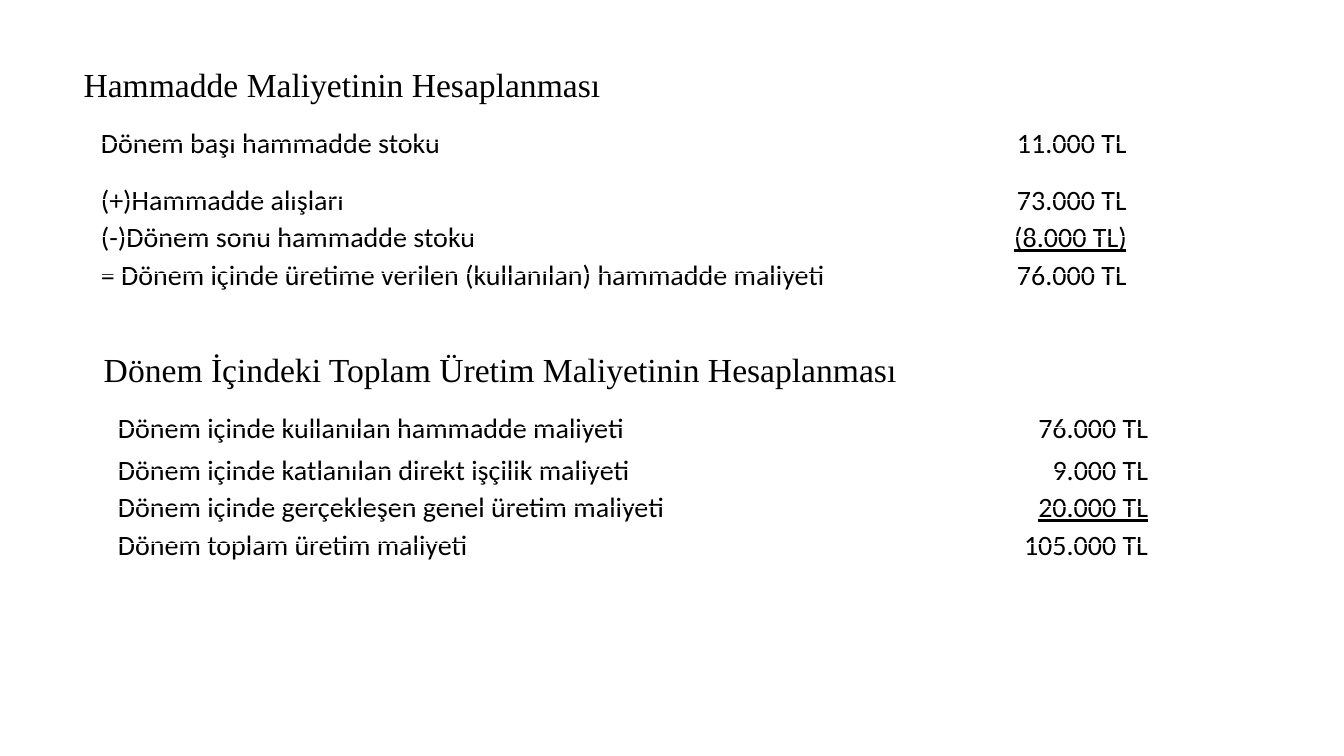
from pptx import Presentation
from pptx.dml.color import RGBColor
from pptx.enum.text import MSO_ANCHOR, MSO_AUTO_SIZE, PP_ALIGN
from pptx.util import Pt

HEADING_FONT = {"name": "Times New Roman", "size": Pt(24), "bold": False}
BODY_FONT = {"name": "Calibri", "size": Pt(20), "bold": False}
HEADING_FRAME = {
    "word_wrap": True,
    "auto_size": MSO_AUTO_SIZE.NONE,
    "vertical_anchor": MSO_ANCHOR.TOP,
}
CELL_MARGINS = {"margin_left": 0, "margin_right": 0, "margin_top": 0, "margin_bottom": 0}
LABEL_INDENT = 5

MATERIAL_COST = [
    ("Dönem başı hammadde stoku", "11.000 TL"),
    ("(+)Hammadde alışları", "73.000 TL"),
    ("(-)Dönem sonu hammadde stoku", "(8.000 TL)"),
    ("= Dönem içinde üretime verilen (kullanılan) hammadde maliyeti", "76.000 TL"),
]
PRODUCTION_COST = [
    ("Dönem içinde kullanılan hammadde maliyeti", "76.000 TL"),
    ("Dönem içinde katlanılan direkt işçilik maliyeti", "9.000 TL"),
    ("Dönem içinde gerçekleşen genel üretim maliyeti", "20.000 TL"),
    ("Dönem toplam üretim maliyeti", "105.000 TL"),
]


def set_attributes(target, values):
    for name, value in values.items():
        setattr(target, name, value)


def set_color(font, color):
    font.color.rgb = RGBColor.from_string(color)


def write_text(paragraph, text, font_values, alignment=PP_ALIGN.LEFT):
    paragraph.alignment = alignment
    run = paragraph.add_run()
    run.text = text
    set_attributes(run.font, font_values)
    set_color(run.font, "000000")
    return run


def format_heading(shape, text, left, top, width, height):
    set_attributes(shape, {
        "left": Pt(left), "top": Pt(top), "width": Pt(width), "height": Pt(height),
    })
    set_attributes(shape.text_frame, HEADING_FRAME)
    write_text(shape.text_frame.paragraphs[0], text, HEADING_FONT)


def write_cell(cell, text, alignment, line_spacing, indent=0, underline=False):
    cell.fill.background()
    set_attributes(cell, {**CELL_MARGINS, "margin_left": Pt(indent)})
    paragraph = cell.text_frame.paragraphs[0]
    paragraph.line_spacing = Pt(line_spacing)
    run = write_text(paragraph, text, BODY_FONT, alignment)
    if underline:
        run.font.underline = True


def add_cost_table(slide, entries, left, top, column_widths, first_height, row_height):
    heights = [first_height] + [row_height] * (len(entries) - 1)
    table = slide.shapes.add_table(
        len(entries), 2, Pt(left), Pt(top), Pt(sum(column_widths)), Pt(sum(heights))
    ).table
    set_attributes(table, {"first_row": False, "horz_banding": False})
    for column, width in zip(table.columns, column_widths):
        column.width = Pt(width)
    last = len(entries) - 1
    for index, (label, amount) in enumerate(entries):
        table.rows[index].height = Pt(heights[index])
        spacing = 13.8 if index == last else 13.5
        write_cell(table.cell(index, 0), label, PP_ALIGN.LEFT, spacing, LABEL_INDENT)
        write_cell(table.cell(index, 1), amount, PP_ALIGN.RIGHT, spacing,
                   underline=index == last - 1)


def main():
    presentation = Presentation()
    set_attributes(presentation, {"slide_width": Pt(960), "slide_height": Pt(540)})
    slide = presentation.slides.add_slide(presentation.slide_layouts[5])

    format_heading(slide.shapes.title, "Hammadde Maliyetinin Hesaplanması",
                   52.5, 42, 856, 36)
    add_cost_table(slide, MATERIAL_COST, 67, 101.5, (553.5, 184.5), 41, 26.4)

    subheading = slide.shapes.add_textbox(0, 0, 0, 0)
    format_heading(subheading, "Dönem İçindeki Toplam Üretim Maliyetinin Hesaplanması",
                   67, 245.5, 816, 36)
    add_cost_table(slide, PRODUCTION_COST, 79.2, 305.3, (556, 185), 30.2, 26.4)

    presentation.save("out.pptx")


if __name__ == "__main__":
    main()
